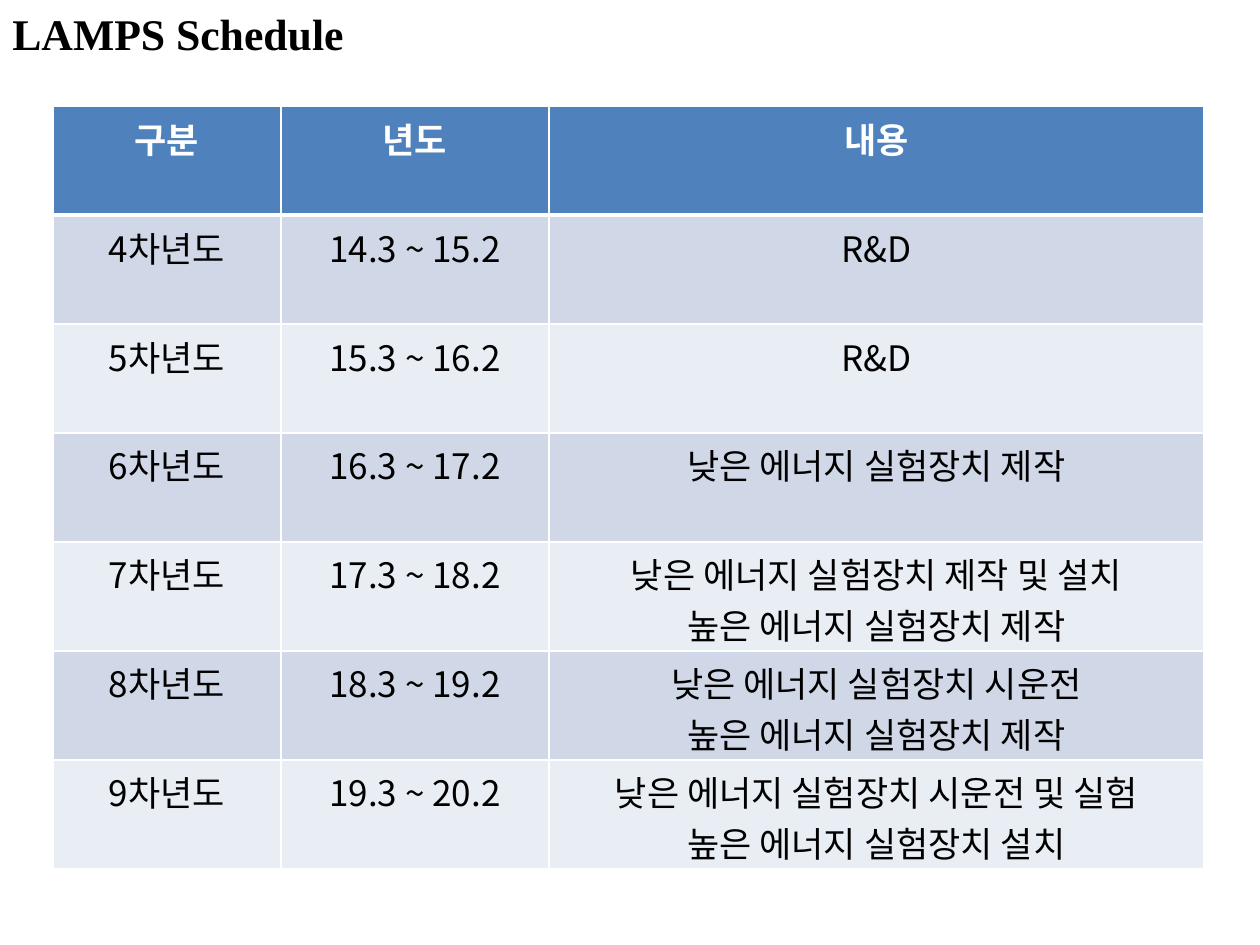
from dataclasses import dataclass

from lxml.etree import SubElement
from pptx import Presentation
from pptx.dml.color import RGBColor
from pptx.enum.text import MSO_ANCHOR, PP_ALIGN
from pptx.oxml import parse_xml
from pptx.oxml.ns import nsdecls, qn
from pptx.util import Emu, Pt

PX_PER_INCH = 126


@dataclass(frozen=True)
class Theme:
    title_font: str = "Times New Roman"
    table_font: str = "Noto Sans CJK KR"
    title_size: int = 25
    table_size: int = 20
    text: str = "000000"
    header_text: str = "FFFFFF"
    header_fill: str = "4F81BD"
    band_fills: tuple[str, str] = ("D0D8E8", "E9EDF4")
    border: str = "FFFFFF"
    border_width: int = 1
    header_rule_width: int = 3


@dataclass(frozen=True)
class Box:
    left: int
    top: int
    width: int
    height: int


@dataclass(frozen=True)
class ScheduleRow:
    stage: str
    period: str
    content: str


@dataclass(frozen=True)
class RowStyle:
    fill: str
    color: str
    bold: bool
    top_rule: int
    bottom_rule: int


THEME = Theme()
TITLE_BOX = Box(0, 1, 1260, 65)
TABLE_LEFT, TABLE_TOP = 53, 106
COLUMN_WIDTHS = (228, 268, 655)
ROW_HEIGHT = 109
ROWS = (
    ScheduleRow("구분", "년도", "내용"),
    ScheduleRow("4차년도", "14.3 ~ 15.2", "R&D"),
    ScheduleRow("5차년도", "15.3 ~ 16.2", "R&D"),
    ScheduleRow("6차년도", "16.3 ~ 17.2", "낮은 에너지 실험장치 제작"),
    ScheduleRow("7차년도", "17.3 ~ 18.2", "낮은 에너지 실험장치 제작 및 설치\n높은 에너지 실험장치 제작"),
    ScheduleRow("8차년도", "18.3 ~ 19.2", "낮은 에너지 실험장치 시운전\n높은 에너지 실험장치 제작"),
    ScheduleRow("9차년도", "19.3 ~ 20.2", "낮은 에너지 실험장치 시운전 및 실험\n높은 에너지 실험장치 설치"),
)


def px(length: int) -> Emu:
    return Emu(round(length * 914400 / PX_PER_INCH))


def place(box: Box) -> tuple[Emu, ...]:
    return tuple(px(length) for length in (box.left, box.top, box.width, box.height))


def write_text(frame, text: str, font: str, size: int, color: str,
               bold: bool, alignment: PP_ALIGN) -> None:
    frame.text = text
    font_format = {"name": font, "size": Pt(size), "bold": bold}
    for paragraph in frame.paragraphs:
        paragraph.alignment = alignment
        for run in paragraph.runs:
            for name, value in font_format.items():
                setattr(run.font, name, value)
            run.font.color.rgb = RGBColor.from_string(color)
            east_asian = SubElement(run.font._element, qn("a:ea"))
            east_asian.set("typeface", font)


def set_borders(cell, top: int, bottom: int) -> None:
    side = THEME.border_width
    widths = {"lnL": side, "lnR": side, "lnT": top, "lnB": bottom}
    properties = cell._tc.get_or_add_tcPr()
    for index, (tag, width) in enumerate(widths.items()):
        properties.insert(index, parse_xml(
            f'<a:{tag} {nsdecls("a")} w="{Pt(width)}"><a:solidFill>'
            f'<a:srgbClr val="{THEME.border}"/></a:solidFill></a:{tag}>'))


def row_style(index: int) -> RowStyle:
    thin, thick = THEME.border_width, THEME.header_rule_width
    if index == 0:
        return RowStyle(THEME.header_fill, THEME.header_text, True, thin, thick)
    fill = THEME.band_fills[(index - 1) % 2]
    return RowStyle(fill, THEME.text, False, thick if index == 1 else thin, thin)


def add_title(slide) -> None:
    frame = slide.shapes.add_textbox(*place(TITLE_BOX)).text_frame
    frame.word_wrap = True
    write_text(frame, "LAMPS Schedule", THEME.title_font, THEME.title_size,
               THEME.text, True, PP_ALIGN.LEFT)


def add_schedule(slide) -> None:
    box = Box(TABLE_LEFT, TABLE_TOP, sum(COLUMN_WIDTHS), ROW_HEIGHT * len(ROWS))
    table = slide.shapes.add_table(len(ROWS), len(COLUMN_WIDTHS), *place(box)).table
    for column, width in zip(table.columns, COLUMN_WIDTHS):
        column.width = px(width)
    for index, row in enumerate(ROWS):
        table.rows[index].height = px(ROW_HEIGHT)
        style = row_style(index)
        for cell, text in zip(table.rows[index].cells, (row.stage, row.period, row.content)):
            cell.vertical_anchor = MSO_ANCHOR.TOP
            cell.fill.solid()
            cell.fill.fore_color.rgb = RGBColor.from_string(style.fill)
            set_borders(cell, style.top_rule, style.bottom_rule)
            write_text(cell.text_frame, text, THEME.table_font, THEME.table_size,
                       style.color, style.bold, PP_ALIGN.CENTER)


def main() -> None:
    presentation = Presentation()
    presentation.slide_width, presentation.slide_height = px(1260), px(945)
    slide = presentation.slides.add_slide(presentation.slide_layouts[6])
    add_title(slide)
    add_schedule(slide)
    presentation.save("out.pptx")


if __name__ == "__main__":
    main()
